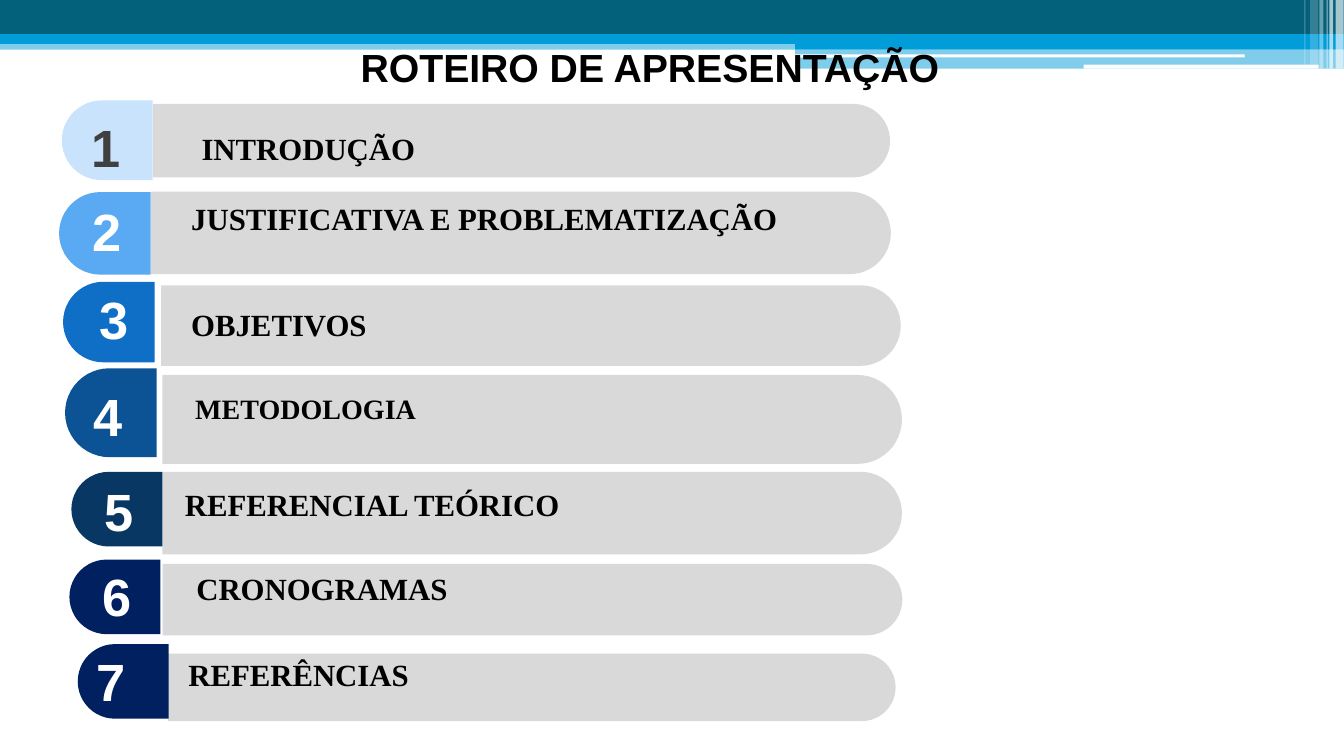
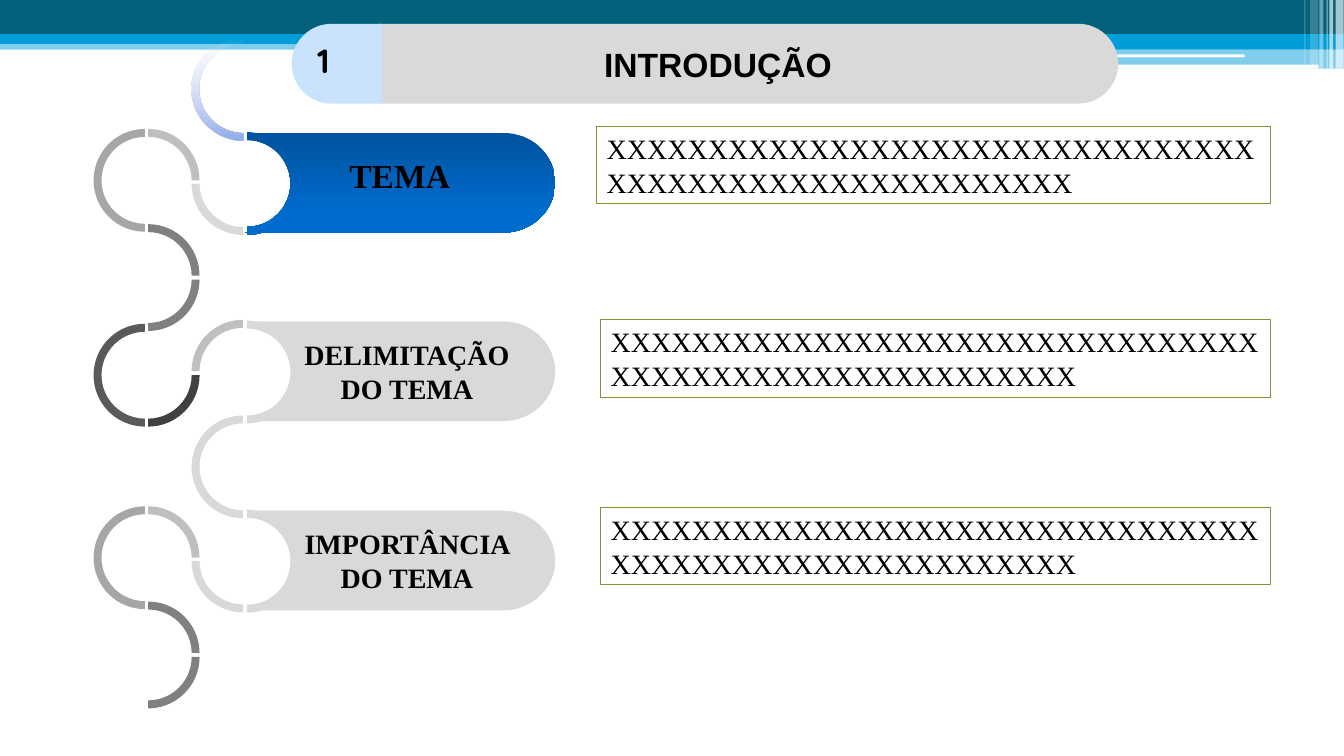
from lxml.etree import SubElement as Sub
from pptx import Presentation
from pptx.dml.color import RGBColor as RGB
from pptx.enum.shapes import MSO_SHAPE as Geo
from pptx.enum.text import PP_ALIGN as Align
from pptx.oxml.ns import qn
from pptx.util import Cm, Pt

TEAL = RGB(0x04, 0x61, 0x7B)
BLUE = RGB(0x00, 0x9D, 0xD9)
WHITE = RGB(0xFF, 0xFF, 0xFF)
BLACK = RGB(0x00, 0x00, 0x00)
OLIVE = RGB(0x7E, 0x96, 0x32)
ICE = RGB(0xC8, 0xE3, 0xFB)
SKY = RGB(0x59, 0xAA, 0xF2)
AZURE = RGB(0x0F, 0x6F, 0xC6)
COBALT = RGB(0x0B, 0x53, 0x94)
DEEP = RGB(0x08, 0x37, 0x63)
NAVY = RGB(0x00, 0x20, 0x60)
COAL = RGB(0x40, 0x40, 0x40)
SLATE = RGB(0x59, 0x59, 0x59)
GREY = RGB(0x80, 0x80, 0x80)
ASH = RGB(0xA6, 0xA6, 0xA6)
SILVER = RGB(0xBF, 0xBF, 0xBF)
PALE = RGB(0xD9, 0xD9, 0xD9)

# Gradient stops: position, colour, opacity (all in percent)
FADE = [(0, "8EABEE", 100), (25, "BBCBF2", 100), (100, "DEE5F8", 0)]
DUSK = [(0, "00539F", 100), (80, "006CCE", 100), (100, "006DCF", 100)]

SANS, SERIF, ROUND = "Arial", "Times New Roman", "Quicksand"
WIDE, HIGH = 33.87, 19.05
RING = 2.59


def add_part(slide, geo, box, fill=None, alpha=100, line=None):
    part = slide.shapes.add_shape(geo, *map(Cm, box))
    part.shadow.inherit = False
    if fill is None:
        part.fill.background()
    else:
        part.fill.solid()
        part.fill.fore_color.rgb = fill
    if alpha < 100:
        tint = part.fill._xPr.find(qn("a:solidFill"))[0]
        Sub(tint, qn("a:alpha"), val=str(alpha * 1000))
    if line is None:
        part.line.fill.background()
    else:
        part.line.color.rgb = line
        part.line.width = Pt(0.75)
    return part


def blend(part, stops, angle):
    """Fill a part with a linear gradient, angle clockwise from the right."""
    part.fill.gradient()
    grad = part.fill._xPr.find(qn("a:gradFill"))
    for child in list(grad):
        grad.remove(child)
    grad.set("rotWithShape", "1")
    row = Sub(grad, qn("a:gsLst"))
    for pos, tone, alpha in stops:
        stop = Sub(row, qn("a:gs"), pos=str(pos * 1000))
        tint = Sub(stop, qn("a:srgbClr"), val=tone)
        if alpha < 100:
            Sub(tint, qn("a:alpha"), val=str(alpha * 1000))
    Sub(grad, qn("a:lin"), ang=str(angle * 60000), scaled="0")


def put_text(slide, text, box, size=22, font=SERIF, color=BLACK,
             bold=True, align=Align.LEFT, line=None):
    if line is None:
        part = slide.shapes.add_textbox(*map(Cm, box))
    else:
        part = add_part(slide, Geo.RECTANGLE, box, line=line)
    frame = part.text_frame
    frame.word_wrap = True
    para = frame.paragraphs[0]
    para.alignment = align
    run = para.add_run()
    run.text = text
    run.font.size = Pt(size)
    run.font.name = font
    run.font.bold = bold
    run.font.color.rgb = color


def add_tab(slide, box, fill, turn):
    """Tab with one round end: turn 270 rounds the left, 90 the right."""
    left, top, wide, high = box
    shift = (wide - high) / 2
    tab = add_part(slide, Geo.ROUND_2_SAME_RECTANGLE,
                   (left + shift, top - shift, high, wide), fill)
    tab.adjustments[0] = 0.5
    tab.adjustments[1] = 0
    tab.rotation = turn


def add_arc(slide, left, top, start, end, fill):
    """Part of a ring, clockwise between two angles in degrees."""
    arc = add_part(slide, Geo.BLOCK_ARC, (left, top, RING, RING), fill)
    for spot, value in enumerate((start * 0.6, end * 0.6, 0.077)):
        arc.adjustments[spot] = value
    return arc


def add_bands(slide):
    # Horizontal bands
    for box, fill, alpha in (
        ((0, 1.02, WIDE, 0.23), BLUE, 50),
        ((0, 0, WIDE, 0.86), TEAL, 100),
        ((0, 0.86, WIDE, 0.25), BLUE, 100),
        ((20.04, 0.99, 13.83, 0.25), BLUE, 100),
        ((20.04, 1.22, 13.83, 0.51), BLUE, 50),
    ):
        add_part(slide, Geo.RECTANGLE, box, fill, alpha)
    # White rules
    for box in ((20.02, 1.37, 11.35, 0.08), (27.31, 1.63, 5.92, 0.1)):
        add_part(slide, Geo.ROUNDED_RECTANGLE, box, WHITE)
    # Upright stripes at the right edge
    for left, wide, high, alpha in (
        (33.66, 0.2, 1.73, 65), (33.5, 0.1, 1.73, 65),
        (33.43, 0.03, 1.73, 60), (33.25, 0.1, 1.73, 40),
        (33.02, 0.2, 1.63, 20), (32.87, 0.03, 1.63, 30),
    ):
        add_part(slide, Geo.RECTANGLE, (left, 0, wide, high), WHITE, alpha)


def new_slide(deck):
    slide = deck.slides.add_slide(deck.slide_layouts[6])
    add_bands(slide)
    return slide


def add_item(slide, num, label, tab, bar, fill, mark, spot, size=22):
    """Agenda row; mark and spot place the digit and the label in the tab."""
    left, top = tab[:2]
    add_tab(slide, bar, PALE, 90)
    add_tab(slide, tab, fill, 270)
    put_text(slide, f"{num} ", (left + mark[0], top + mark[1], mark[2], 1.85),
             size=37.4, font=SANS, color=COAL if num == 1 else WHITE,
             align=Align.CENTER)
    put_text(slide, label, (left + spot[0], top + spot[1], 17, 1.19),
             size=size)


def agenda(deck):
    slide = new_slide(deck)
    put_text(slide, "ROTEIRO DE APRESENTAÇÃO", (8.84, 0.97, 24.77, 1.45),
             size=28, font=SANS)
    rows = (
        ("INTRODUÇÃO", (1.56, 2.53, 2.29, 2.01), (3.86, 2.62, 18.57, 1.85),
         ICE, (0.29, 0.24, 2.03), (3.27, 0.62), 22),
        ("JUSTIFICATIVA E PROBLEMATIZAÇÃO", (1.49, 4.84, 2.31, 2.08),
         (3.81, 4.83, 18.64, 2.08), SKY, (0.36, 0.06, 2.08), (3.08, 0.06), 22),
        ("OBJETIVOS", (1.59, 7.1, 2.31, 2.03), (4.06, 7.19, 18.64, 2.03),
         AZURE, (0.21, 0, 2.51), (2.98, 0.47), 22),
        ("METODOLOGIA", (1.64, 9.28, 2.31, 2.24), (4.09, 9.45, 18.64, 2.24),
         COBALT, (0.24, 0.27, 2.08), (3.03, 0.45), 20),
        ("REFERENCIAL TEÓRICO", (1.8, 11.89, 2.29, 1.88),
         (4.09, 11.89, 18.64, 2.08), DEEP, (0.36, 0.05, 2.03),
         (2.61, 0.23), 22),
        ("CRONOGRAMAS", (1.75, 14.1, 2.29, 1.88), (4.1, 14.21, 18.64, 1.8),
         NAVY, (0.38, 0, 2.03), (2.95, 0.12), 22),
        ("REFERÊNCIAS", (1.96, 16.23, 2.29, 1.88), (4.23, 16.47, 18.34, 1.7),
         NAVY, (0.02, 0, 2.03), (2.54, 0.18), 22),
    )
    for num, row in enumerate(rows, 1):
        add_item(slide, num, *row)


def add_chain(slide, left, top):
    """Winding line of ring parts; the first loop starts at left, top."""
    near, far = left + 0.08, left + 2.47
    blend(add_arc(slide, far, top - 2.31, 90, 270, PALE), FADE, 270)
    # Loop beside the first and the last topic
    for base in (top, top + 9.51):
        add_arc(slide, far, base + 0.08, 90, 180, PALE)
        add_arc(slide, near, base, 270, 0, SILVER)
        add_arc(slide, left, base, 90, 270, ASH)
        add_arc(slide, near, base + 2.4, 270, 0, GREY)
        add_arc(slide, near, base + 2.5, 0, 90, GREY)
    # Link through the middle topic
    add_arc(slide, left, top + 4.91, 90, 270, SLATE)
    add_arc(slide, near, top + 4.91, 0, 90, COAL)
    add_arc(slide, far, top + 4.81, 180, 270, SILVER)
    add_arc(slide, far, top + 7.22, 90, 270, PALE)


def add_topic(slide, left, top, label, size, shift, note, stops=None):
    """Half ring, pill with its label, and the framed note beside it."""
    arc = add_arc(slide, left, top, 270, 90, PALE)
    pill = add_part(slide, Geo.FLOWCHART_STORED_DATA,
                    (left + 1.24, top + 0.02, 7.82, 2.51), PALE)
    pill.rotation = 180
    if stops:
        blend(arc, stops, 90)
        blend(pill, stops, 270)
    put_text(slide, label, (left + shift[0], top + shift[1], 6.65, 1.96),
             size=size, align=Align.CENTER)
    put_text(slide, "X" * 55, note, size=20, bold=False,
             align=Align.JUSTIFY, line=OLIVE)


def intro(deck):
    slide = new_slide(deck)
    add_chain(slide, 2.36, 3.25)
    # Topics
    for top, label, size, shift, note, stops in (
        (3.33, "TEMA", 24, (1.82, 0.45), (15.04, 3.18, 16.97, 1.96), DUSK),
        (8.08, "DELIMITAÇÃO DO TEMA", 20, (2, 0.3),
         (15.14, 8.05, 16.87, 1.96), None),
        (12.85, "IMPORTÂNCIA DO TEMA", 20, (2, 0.3),
         (15.14, 12.78, 16.87, 1.96), None),
    ):
        add_topic(slide, 4.93, top, label, size, shift, note, stops)
    # Heading
    add_tab(slide, (9.54, 0.6, 18.64, 2.01), PALE, 90)
    put_text(slide, "INTRODUÇÃO", (14.45, 0.97, 7.29, 1.27), size=24,
             font=SANS, align=Align.CENTER)
    add_tab(slide, (7.35, 0.6, 2.29, 2.01), ICE, 270)
    put_text(slide, "1", (7.75, 0.89, 1.73, 1.27), size=24, font=ROUND)


def main():
    deck = Presentation()
    deck.slide_width, deck.slide_height = Cm(WIDE), Cm(HIGH)
    agenda(deck)
    intro(deck)
    deck.save("out.pptx")


if __name__ == "__main__":
    main()
